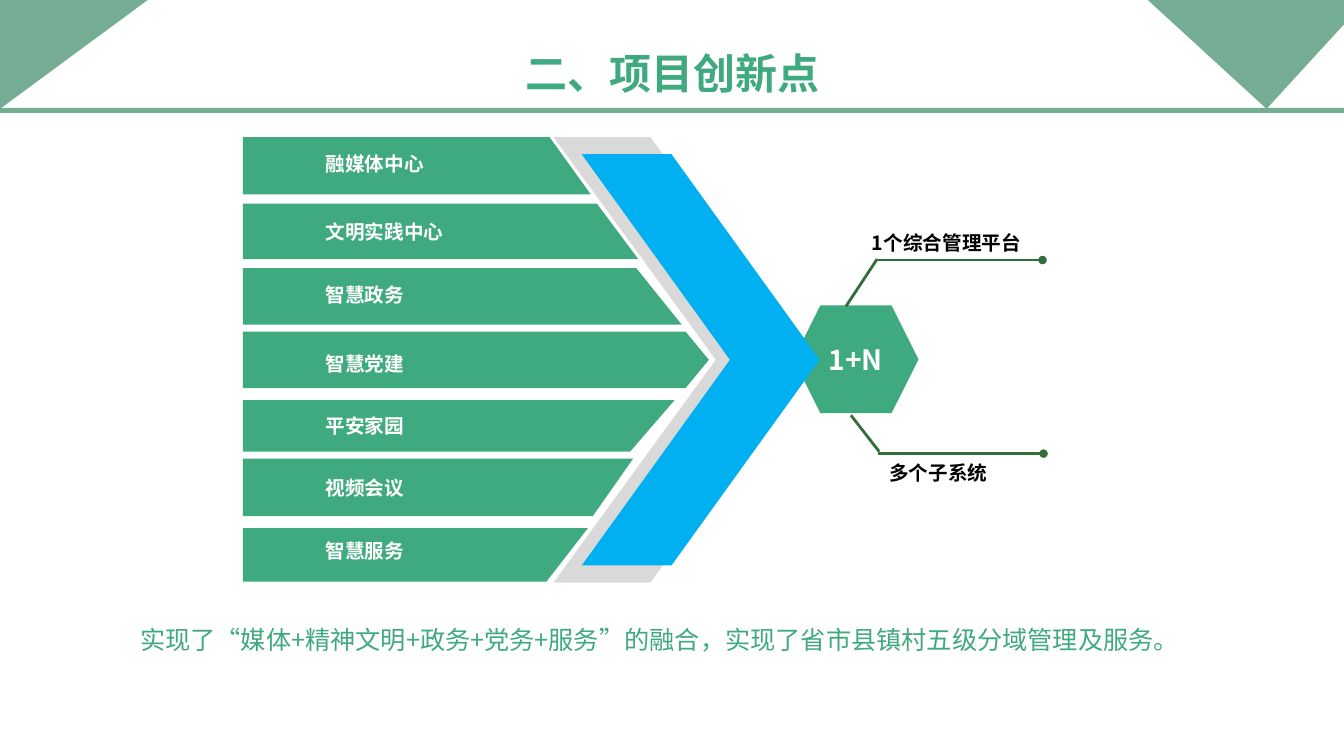
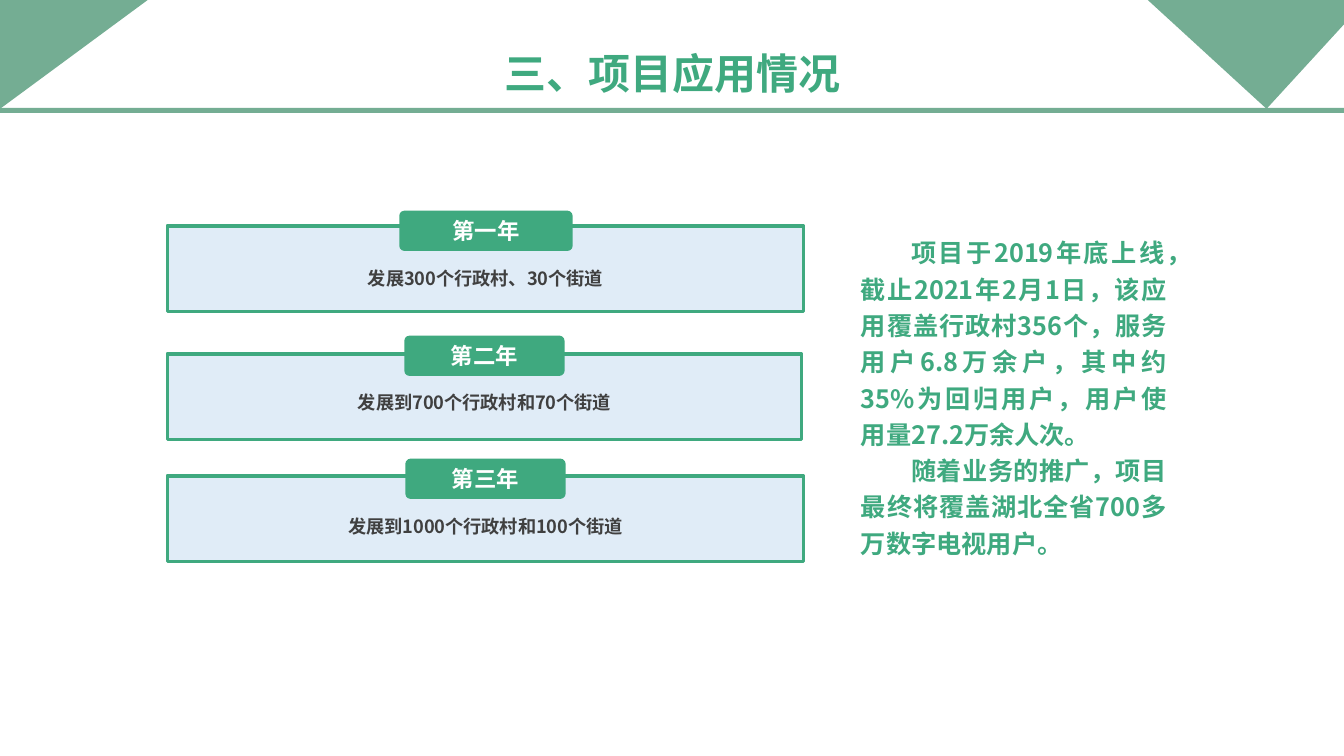
from dataclasses import dataclass

from lxml import etree
from pptx import Presentation
from pptx.dml.color import RGBColor
from pptx.enum.shapes import MSO_CONNECTOR, MSO_SHAPE
from pptx.enum.text import MSO_ANCHOR, MSO_AUTO_SIZE, PP_ALIGN
from pptx.oxml.ns import qn
from pptx.util import Inches, Pt

LEFT, CENTER, JUSTIFY = PP_ALIGN.LEFT, PP_ALIGN.CENTER, PP_ALIGN.JUSTIFY
RECTANGLE, ROUNDED = MSO_SHAPE.RECTANGLE, MSO_SHAPE.ROUNDED_RECTANGLE
HEXAGON, TRIANGLE, PENTAGON = MSO_SHAPE.HEXAGON, MSO_SHAPE.ISOSCELES_TRIANGLE, MSO_SHAPE.PENTAGON
STRAIGHT = MSO_CONNECTOR.STRAIGHT
MIDDLE, FIT_SHAPE = MSO_ANCHOR.MIDDLE, MSO_AUTO_SIZE.SHAPE_TO_FIT_TEXT


@dataclass(frozen=True)
class Theme:
    font: str = "Noto Sans CJK SC"
    green: str = "3FA97F"
    band: str = "74AD93"
    blue: str = "00B0F0"
    grey: str = "D9D9D9"
    branch: str = "336E3A"
    panel: str = "E0ECF7"
    dark: str = "404040"
    black: str = "000000"
    white: str = "FFFFFF"
    title: int = 30
    hub: int = 20
    body: int = 18
    tag: int = 16
    label: int = 14
    detail: int = 13


THEME = Theme()
SLIDE_WIDTH, SLIDE_HEIGHT = 13.33, 7.5

# Content: innovation slide
INNOVATION_TITLE = "二、项目创新点"
BAR_LEFT, LABEL_LEFT, TIP_X, AXIS_Y = 2.41, 3.13, 7.03, 3.57
# label, bar top, bar bottom, right end at top, right end at bottom, label top
BARS = [
    ("融媒体中心", 1.36, 1.93, 5.45, 5.86, 1.46),
    ("文明实践中心", 2.02, 2.57, 5.92, 6.33, 2.13),
    ("智慧政务", 2.66, 3.22, 6.31, 6.76, 2.76),
    ("智慧党建", 3.29, 3.85, 6.80, 6.80, 3.44),
    ("平安家园", 3.97, 4.48, 6.69, 6.25, 4.06),
    ("视频会议", 4.55, 5.12, 6.28, 5.88, 4.67),
    ("智慧服务", 5.24, 5.77, 5.83, 5.42, 5.30),
]
# left, half height, depth, thickness, colour
CHEVRONS = [
    (5.49, 2.21, 1.61, 0.96, THEME.grey),
    (5.77, 2.04, 1.47, 0.89, THEME.blue),
]
HUB = "1+N"
# label, label place, slanted stroke, level stroke
BRANCHES = [
    ("1个综合管理平台", (8.55, 2.24), (8.39, 3.04, 8.70, 2.57), (8.70, 2.58, 10.34, 2.58)),
    ("多个子系统", (8.72, 4.52), (8.44, 4.12, 8.72, 4.48), (8.71, 4.50, 10.35, 4.50)),
]
SUMMARY = "实现了“媒体+精神文明+政务+党务+服务”的融合，实现了省市县镇村五级分域管理及服务。"

# Content: application slide
APPLICATION_TITLE = "三、项目应用情况"
PANEL_LEFT, PANEL_HEIGHT, TAG_HEIGHT = 1.66, 0.85, 0.4
# year, detail, panel top, panel width, tag left, tag top, tag width, detail top
YEARS = [
    ("第一年", "发展300个行政村、30个街道", 2.24, 6.31, 3.96, 2.09, 1.72, 2.60),
    ("第二年", "发展到700个行政村和70个街道", 3.51, 6.29, 4.01, 3.33, 1.59, 3.83),
    ("第三年", "发展到1000个行政村和100个街道", 4.72, 6.31, 4.02, 4.55, 1.59, 5.06),
]
STORY = [
    "项目于2019年底上线，截止2021年2月1日，该应用覆盖行政村356个，"
    "服务用户6.8万余户，其中约35%为回归用户，用户使用量27.2万余人次。",
    "随着业务的推广，项目最终将覆盖湖北全省700多万数字电视用户。",
]

# Corner triangles: left, top, rotation
CORNERS = [(9.94, -4.65, 42.5), (-3.25, -3.68, 53.6)]


def rgb(colour):
    return RGBColor.from_string(colour)


def paint(shape, fill, line=None, width=2.5):
    shape.shadow.inherit = False
    shape.fill.solid()
    shape.fill.fore_color.rgb = rgb(fill)
    if line:
        shape.line.color.rgb = rgb(line)
        shape.line.width = Pt(width)
    else:
        shape.line.fill.background()
    return shape


def add_preset(page, kind, place, fill, line=None):
    return paint(page.shapes.add_shape(kind, *map(Inches, place)), fill, line)


def add_outline(page, points, fill):
    start, *rest = [(Inches(x), Inches(y)) for x, y in points]
    builder = page.shapes.build_freeform(*start)
    builder.add_line_segments(rest, close=True)
    return paint(builder.convert_to_shape(), fill)


def write(box, paragraphs, size, colour, bold=True, align=LEFT):
    frame = box.text_frame
    frame.text = "\n".join(paragraphs)
    for para in frame.paragraphs:
        para.alignment = align
        for span in para.runs:
            span.font.name = THEME.font
            span.font.size = Pt(size)
            span.font.bold = bold
            span.font.color.rgb = rgb(colour)
            east_asian = etree.SubElement(span.font._element, qn("a:ea"))
            east_asian.set("typeface", THEME.font)


def add_text(page, place, paragraphs, size, colour, wrap=True, **style):
    box = page.shapes.add_textbox(*map(Inches, place))
    box.text_frame.word_wrap = wrap
    box.text_frame.auto_size = FIT_SHAPE
    write(box, paragraphs, size, colour, **style)
    return box


def add_stroke(page, ends, dot=False):
    stroke = page.shapes.add_connector(STRAIGHT, *map(Inches, ends))
    stroke.line.color.rgb = rgb(THEME.branch)
    stroke.line.width = Pt(2)
    if dot:
        etree.SubElement(stroke.line._get_or_add_ln(), qn("a:tailEnd")).set("type", "oval")
    etree.SubElement(stroke._element.spPr, qn("a:effectLst"))


def add_page(deck, title):
    """Blank page with the shared band, title and corners."""
    page = deck.slides.add_slide(deck.slide_layouts[6])
    band = add_preset(page, PENTAGON, (-0.19, 1.07, 13.52, 0.05), THEME.band)
    band.rotation = 180
    width = 3.53
    add_text(page, ((SLIDE_WIDTH + 0.02 - width) / 2, 0.42, width, 0.6), [title],
             THEME.title, THEME.green, wrap=False, align=CENTER)
    for left, top, rotation in CORNERS:
        corner = add_preset(page, TRIANGLE, (left, top, 4.85, 4.71), THEME.band)
        corner.adjustments[0] = 1
        corner.rotation = rotation
    return page


def build_innovation(deck):
    page = add_page(deck, INNOVATION_TITLE)
    add_preset(page, HEXAGON, (7.87, 3.03, 1.24, 1.07), THEME.green)

    # Chevrons, symmetric about the axis
    for left, half, depth, thick, colour in CHEVRONS:
        top, bottom = AXIS_Y - half, AXIS_Y + half
        add_outline(page, [(left, top), (left + depth, AXIS_Y), (left, bottom),
                           (left + thick, bottom), (left + depth + thick, AXIS_Y),
                           (left + thick, top)], colour)

    # Bars; the one crossing the axis ends in a point
    for label, top, bottom, top_end, bottom_end, label_top in BARS:
        tip = [(TIP_X, AXIS_Y)] if top < AXIS_Y < bottom else []
        add_outline(page, [(BAR_LEFT, top), (BAR_LEFT, bottom), (bottom_end, bottom),
                           *tip, (top_end, top)], THEME.green)
        add_text(page, (LABEL_LEFT, label_top, 1.74, 0.34), [label], THEME.label, THEME.white)

    # Hub and its branches
    add_text(page, (8.12, 3.35, 1.22, 0.44), [HUB], THEME.hub, THEME.white)
    for label, place, slant, level in BRANCHES:
        add_stroke(page, slant)
        add_stroke(page, level, dot=True)
        add_text(page, (*place, 2.22, 0.34), [label], THEME.label, THEME.black)

    add_text(page, (1.29, 6.14, 10.75, 0.4), [SUMMARY], THEME.body, THEME.green,
             bold=False, align=JUSTIFY)


def build_application(deck):
    page = add_page(deck, APPLICATION_TITLE)

    # Yearly panels
    for year, detail, top, width, tag_left, tag_top, tag_width, detail_top in YEARS:
        add_preset(page, RECTANGLE, (PANEL_LEFT, top, width, PANEL_HEIGHT),
                   THEME.panel, THEME.green)
        tag = add_preset(page, ROUNDED, (tag_left, tag_top, tag_width, TAG_HEIGHT), THEME.green)
        tag.adjustments[0] = 0.13
        tag.text_frame.vertical_anchor = MIDDLE
        write(tag, [year], THEME.tag, THEME.white, align=CENTER)
        add_text(page, (PANEL_LEFT, detail_top, width, 0.32), [detail],
                 THEME.detail, THEME.dark, align=CENTER)

    # Story with first-line indents
    story = add_text(page, (8.44, 2.25, 3.23, 3.37), STORY, THEME.body, THEME.green,
                     align=JUSTIFY)
    for para in story.text_frame.paragraphs:
        para.line_spacing = 1.2
        properties = para._p.get_or_add_pPr()
        properties.set("marL", "0")
        properties.set("indent", str(Inches(0.5)))


def main():
    deck = Presentation()
    deck.slide_width, deck.slide_height = Inches(SLIDE_WIDTH), Inches(SLIDE_HEIGHT)
    build_innovation(deck)
    build_application(deck)
    deck.save("out.pptx")


if __name__ == "__main__":
    main()
